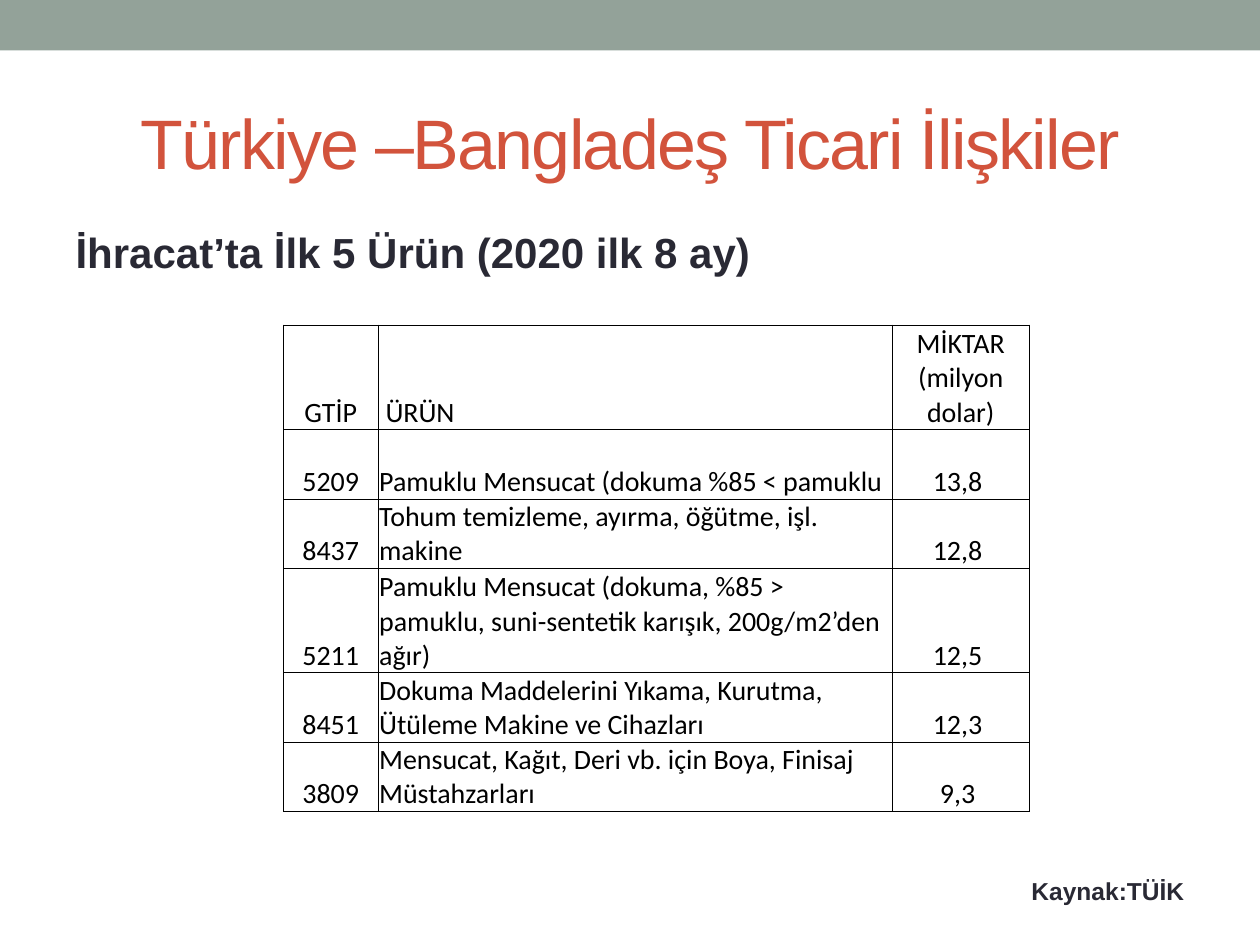
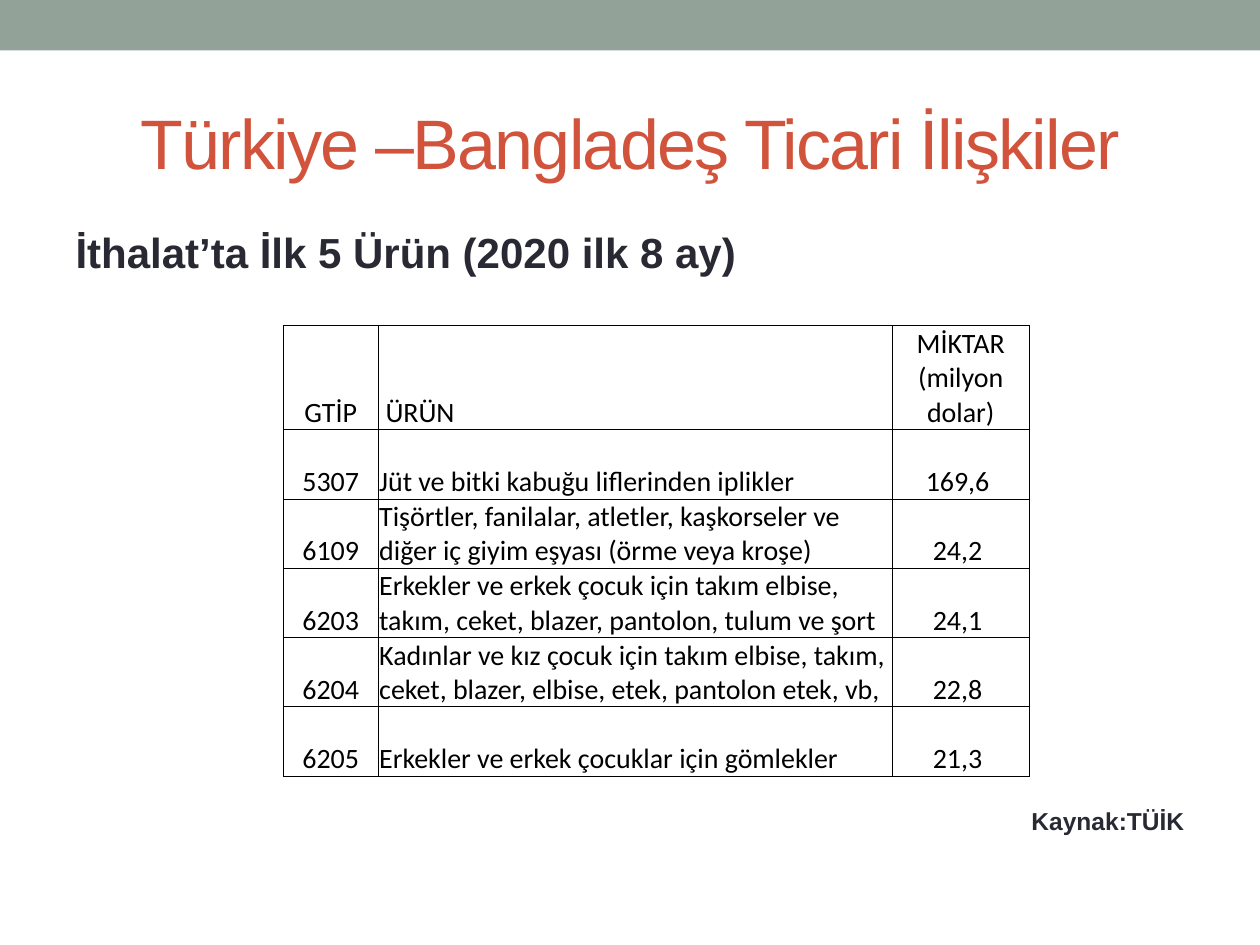
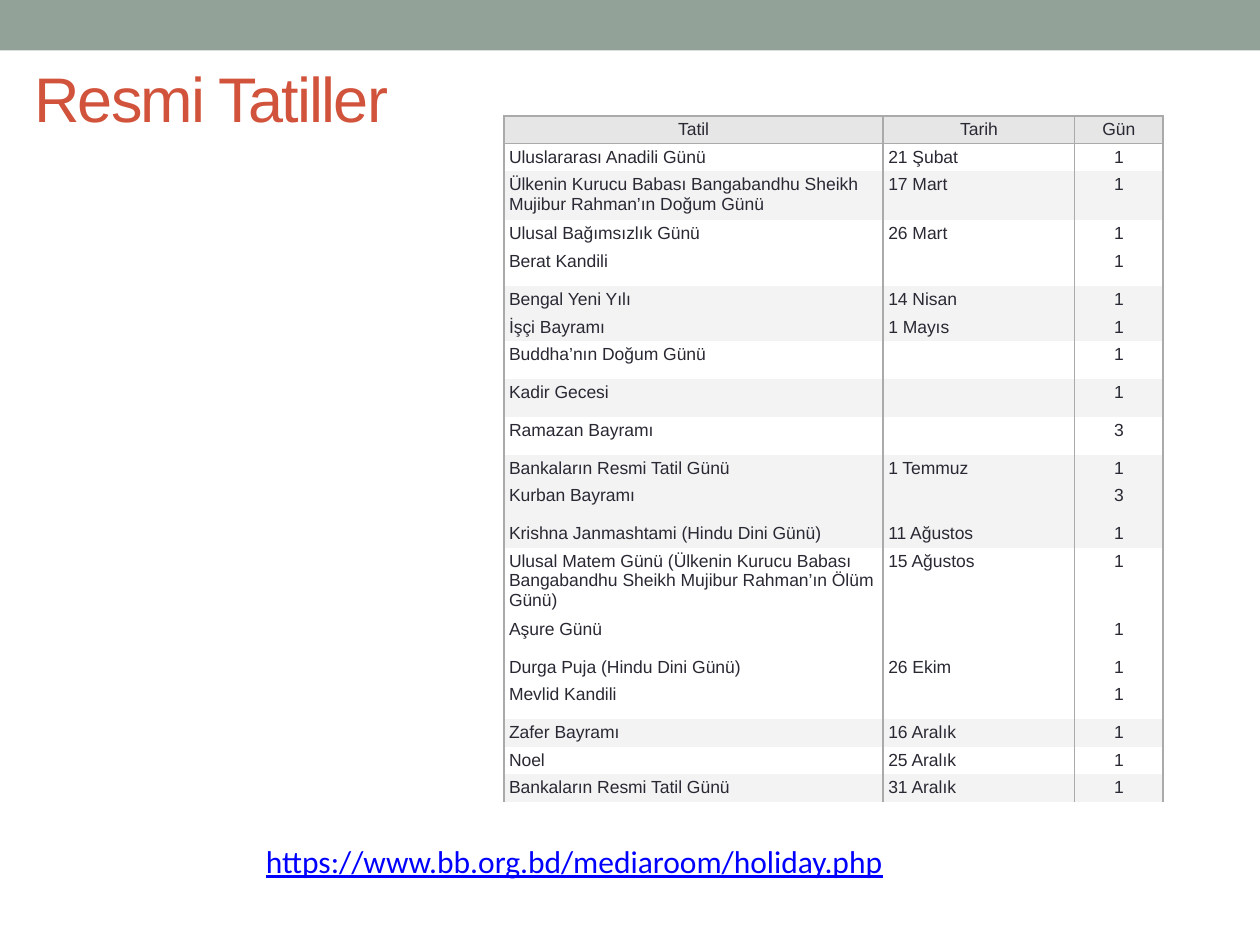
from dataclasses import dataclass

from lxml.etree import SubElement as Sub
from pptx import Presentation
from pptx.dml.color import RGBColor as Rgb
from pptx.enum.shapes import MSO_SHAPE as Kind
from pptx.enum.text import MSO_ANCHOR as Anchor, MSO_AUTO_SIZE as Fit, PP_ALIGN as Align
from pptx.oxml.ns import qn
from pptx.slide import Slide
from pptx.table import Table, _Cell as Cell
from pptx.text.text import _Paragraph as Para
from pptx.util import Inches, Pt

COLORS = {
    "band": "93A299", "title": "D2533C", "ink": "292934", "black": "000000",
    "link": "0000FF", "rule": "AAAAAA", "head": "E6E6E6", "shade": "F3F3F3",
}


# Records
@dataclass
class Face:
    size: float
    color: str
    font: str = "Arial"
    bold: bool = False
    line: bool = False
    space: int = 0


@dataclass
class Good:
    code: str
    name: str
    sum: str
    lines: int = 2


@dataclass
class Trade:
    head: str
    gap: float
    goods: list[Good]


@dataclass
class Day:
    name: str
    date: str
    count: int
    shade: bool = False
    lines: int = 1


TITLE = Face(40, "title", space=-100)
SMALL = Face(36, "title", space=-100)
HEAD = Face(24, "ink", bold=True)
NOTE = Face(14, "ink", bold=True)
LINK = Face(18, "link", "Calibri", line=True)
GOODS = Face(16, "black", "Calibri")
DAYS = Face(10, "ink")

TRADES = [
    Trade("İhracat’ta İlk 5 Ürün (2020 ilk 8 ay)", 342, [
        Good("5209", "Pamuklu Mensucat (dokuma %85 < pamuklu", "13,8"),
        Good("8437", "Tohum temizleme, ayırma, öğütme, işl. makine", "12,8"),
        Good("5211", "Pamuklu Mensucat (dokuma, %85 > pamuklu, "
             "suni-sentetik karışık, 200g/m2’den ağır)", "12,5", 3),
        Good("8451", "Dokuma Maddelerini Yıkama, Kurutma, "
             "Ütüleme Makine ve Cihazları", "12,3"),
        Good("3809", "Mensucat, Kağıt, Deri vb. için Boya, "
             "Finisaj Müstahzarları", "9,3"),
    ]),
    Trade("İthalat’ta İlk 5 Ürün (2020 ilk 8 ay)", 302, [
        Good("5307", "Jüt ve bitki kabuğu liflerinden iplikler", "169,6"),
        Good("6109", "Tişörtler, fanilalar, atletler, kaşkorseler ve "
             "diğer iç giyim eşyası (örme veya kroşe)", "24,2"),
        Good("6203", "Erkekler ve erkek çocuk için takım elbise, takım, "
             "ceket, blazer, pantolon, tulum ve şort", "24,1"),
        Good("6204", "Kadınlar ve kız çocuk için takım elbise, takım, "
             "ceket, blazer, elbise, etek, pantolon etek, vb,", "22,8"),
        Good("6205", "Erkekler ve erkek çocuklar için gömlekler", "21,3"),
    ]),
]

HOLIDAYS = [
    Day("Uluslararası Anadili Günü", "21 Şubat", 1),
    Day("Ülkenin Kurucu Babası Bangabandhu Sheikh Mujibur Rahman’ın Doğum Günü",
        "17 Mart", 1, True, 2),
    Day("Ulusal Bağımsızlık Günü", "26 Mart", 1),
    Day("Berat Kandili", "", 1),
    Day("Bengal Yeni Yılı", "14 Nisan", 1, True),
    Day("İşçi Bayramı", "1 Mayıs", 1, True),
    Day("Buddha’nın Doğum Günü", "", 1),
    Day("Kadir Gecesi", "", 1, True),
    Day("Ramazan Bayramı", "", 3),
    Day("Bankaların Resmi Tatil Günü", "1 Temmuz", 1, True),
    Day("Kurban Bayramı", "", 3, True),
    Day("Krishna Janmashtami (Hindu Dini Günü)", "11 Ağustos", 1, True),
    Day("Ulusal Matem Günü (Ülkenin Kurucu Babası Bangabandhu Sheikh "
        "Mujibur Rahman’ın Ölüm Günü)", "15 Ağustos", 1, lines=3),
    Day("Aşure Günü", "", 1),
    Day("Durga Puja (Hindu Dini Günü)", "26 Ekim", 1),
    Day("Mevlid Kandili", "", 1),
    Day("Zafer Bayramı", "16 Aralık", 1, True),
    Day("Noel", "25 Aralık", 1),
    Day("Bankaların Resmi Tatil Günü", "31 Aralık", 1, True),
]


# Text
def style(para: Para, face: Face, align: Align = Align.LEFT) -> None:
    para.alignment = align
    para.font.size = Pt(face.size)
    for run in para.runs:
        font = run.font
        font.name, font.size, font.bold = face.font, Pt(face.size), face.bold
        font.color.rgb = Rgb.from_string(COLORS[face.color])
        if face.line:
            font.underline = True
        if face.space:
            run._r.get_or_add_rPr().set("spc", str(face.space))


def plain(para: Para) -> None:
    """Take the bullet and its indent off a list paragraph."""
    props = para._p.get_or_add_pPr()
    props.set("marL", "0")
    props.set("indent", "0")
    Sub(props, qn("a:buNone"))


def place(shape, left: float, top: float, width: float, height: float):
    shape.left, shape.top = Inches(left), Inches(top)
    shape.width, shape.height = Inches(width), Inches(height)
    shape.text_frame.auto_size = Fit.NONE
    return shape.text_frame


def add_band(slide: Slide) -> None:
    """Draw the top band and hand it to the master, below all else."""
    band = slide.shapes.add_shape(Kind.RECTANGLE, 0, 0, Inches(10), Inches(0.4))
    band.shadow.inherit = False
    band.fill.solid()
    band.fill.fore_color.rgb = Rgb.from_string(COLORS["band"])
    band.line.fill.background()
    slide.slide_layout.slide_master.shapes._spTree.insert(2, band._element)


# Tables
def add_grid(slide: Slide, left: float, top: float,
             cols: list[float], rows: list[float]) -> Table:
    frame = slide.shapes.add_table(
        len(rows), len(cols), Inches(left), Inches(top),
        Inches(sum(cols)), Inches(sum(rows)))
    grid = frame.table
    grid.first_row = grid.horz_banding = False
    for col, width in zip(grid.columns, cols):
        col.width = Inches(width)
    for row, height in zip(grid.rows, rows):
        row.height = Inches(height)
    return grid


def rule(cell: Cell, sides: str, color: str, width: float) -> None:
    props = cell._tc.get_or_add_tcPr()
    for side in "LRTB":
        line = Sub(props, qn(f"a:ln{side}"), w=str(Pt(width)))
        if side in sides:
            fill = Sub(line, qn("a:solidFill"))
            Sub(fill, qn("a:srgbClr"), val=COLORS[color])
        else:
            Sub(line, qn("a:noFill"))


def paint(cell: Cell, color: str = "") -> None:
    if color:
        cell.fill.solid()
        cell.fill.fore_color.rgb = Rgb.from_string(COLORS[color])
    else:
        cell.fill.background()


def write(cell: Cell, text: str, face: Face, align: Align,
          anchor: Anchor, side: float, edge: float) -> None:
    cell.text_frame.text = text
    cell.vertical_anchor = anchor
    cell.margin_left = cell.margin_right = Inches(side)
    cell.margin_top = cell.margin_bottom = Inches(edge if text else 0)
    style(cell.text_frame.paragraphs[0], face, align)


def add_goods(slide: Slide, goods: list[Good]) -> None:
    high = {2: 0.55, 3: 0.83}
    rows = [Good("GTİP", "ÜRÜN", "MİKTAR (milyon dolar)", 3), *goods]
    grid = add_grid(slide, 2.25, 2.58, [0.75, 4.08, 1.09],
                    [high[good.lines] for good in rows])
    for r, good in enumerate(rows):
        for c, text in enumerate((good.code, good.name, good.sum)):
            cell = grid.cell(r, c)
            align = Align.LEFT if c == 1 else Align.CENTER
            write(cell, text, GOODS, align, Anchor.BOTTOM, 0.01, 0)
            rule(cell, "LRTB", "black", 0.5)
            paint(cell)
            if r and c == 2:
                cell.margin_right = Inches(0.06)
    grid.cell(0, 1).margin_left = Inches(0.06)


def add_days(slide: Slide, days: list[Day]) -> None:
    high = {1: 0.22, 2: 0.39, 3: 0.54}
    rows = [high[1]] + [high[day.lines] if day.date else 0.3 for day in days]
    texts = [("Tatil", "Tarih", "Gün")]
    texts += [(day.name, day.date, str(day.count)) for day in days]
    fills = ["head"] + ["shade" if day.shade else "" for day in days]
    grid = add_grid(slide, 4, 0.92, [3.01, 1.52, 0.7], rows)
    for r, (line, fill) in enumerate(zip(texts, fills)):
        sides = {0: "LRTB", 1: "LRT"}.get(r, "LR")
        anchor = Anchor.TOP if r else Anchor.MIDDLE
        for c, text in enumerate(line):
            cell = grid.cell(r, c)
            align = Align.LEFT if r and c < 2 else Align.CENTER
            write(cell, text, DAYS, align, anchor, 0.04, 0.03)
            rule(cell, sides, "rule", 1)
            paint(cell, fill)


# Slides
def add_trade(slide: Slide, trade: Trade) -> None:
    title = place(slide.shapes.title, 0.5, 0.58, 9, 1.08)
    title.text = "Türkiye –Bangladeş Ticari İlişkiler"
    title.vertical_anchor = Anchor.MIDDLE
    style(title.paragraphs[0], TITLE, Align.CENTER)

    body = place(slide.placeholders[1], 0.5, 1.75, 9, 5.33)
    body.text = trade.head
    head, note = body.paragraphs[0], body.add_paragraph()
    note.text = "Kaynak:TÜİK"
    note.space_before = Pt(trade.gap)
    plain(head)
    plain(note)
    style(head, HEAD)
    style(note, NOTE, Align.RIGHT)
    add_goods(slide, trade.goods)


def add_holidays(slide: Slide) -> None:
    title = place(slide.shapes.title, 0.17, 0.58, 9.33, 0.92)
    title.text = "Resmi Tatiller"
    title.vertical_anchor = Anchor.MIDDLE
    title.margin_top, title.margin_bottom = 0, Inches(0.54)
    style(title.paragraphs[0], SMALL)

    link = place(slide.placeholders[1], 2.01, 6.68, 5.16, 0.3)
    link.text = "https://www.bb.org.bd/mediaroom/holiday.php"
    link.vertical_anchor = Anchor.MIDDLE
    link.margin_top = link.margin_bottom = 0
    para = link.paragraphs[0]
    para.space_before = Pt(0)
    plain(para)
    style(para, LINK)
    add_days(slide, HOLIDAYS)


def main() -> None:
    deck = Presentation()
    deck.slide_width, deck.slide_height = Inches(10), Inches(7.5)
    layout = deck.slide_layouts[1]
    for trade in TRADES:
        add_trade(deck.slides.add_slide(layout), trade)
    last = deck.slides.add_slide(layout)
    add_holidays(last)
    add_band(last)
    deck.save("out.pptx")


if __name__ == "__main__":
    main()
